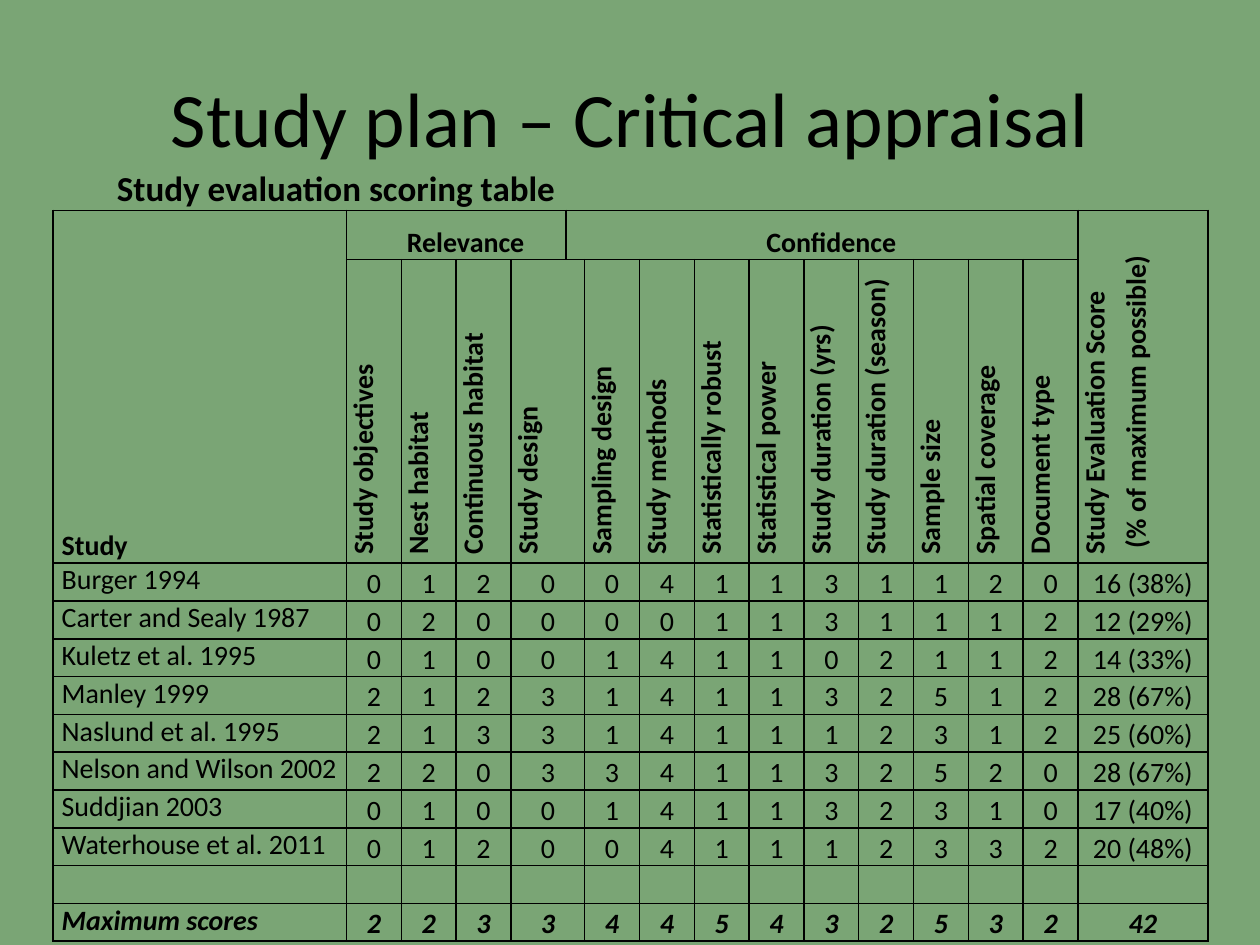
"""Build the critical appraisal slide with its study evaluation scoring table."""
from lxml.etree import SubElement
from pptx import Presentation
from pptx.dml.color import RGBColor
from pptx.enum.text import MSO_ANCHOR as Anchor, PP_ALIGN as Align
from pptx.oxml.ns import qn
from pptx.util import Inches, Pt

BACKGROUND, INK, FONT = "7AA575", "000000", "Calibri"
WIDTH, HEIGHT = 10, 7.5
TABLE_LEFT, TABLE_TOP, TABLE_WIDTH = 0.42, 1.67, 9.17
STUDY_WIDTH, GAP_WIDTH, TOTAL_WIDTH = 2.33, 0.15, 1.03
SCORE_COLUMNS = [1, 2, 3, 4, *range(6, 15)]
TOTAL_COLUMN = 15
SCORE_WIDTH = (TABLE_WIDTH - STUDY_WIDTH - GAP_WIDTH - TOTAL_WIDTH) / len(SCORE_COLUMNS)
COLUMN_WIDTHS = [STUDY_WIDTH] + [SCORE_WIDTH] * 4 + [GAP_WIDTH] + [SCORE_WIDTH] * 9 + [TOTAL_WIDTH]
ROW_HEIGHTS = [0.39, 2.41] + [0.3] * 10

CRITERIA = [
    "Study objectives", "Nest habitat", "Continuous habitat", "Study design",
    "Sampling design", "Study methods", "Statistically robust", "Statistical power",
    "Study duration (yrs)", "Study duration (season)", "Sample size",
    "Spatial coverage", "Document type",
]
STUDIES = [
    ("Burger 1994", "0120041131120", "16 (38%)"),
    ("Carter and Sealy 1987", "0200001131112", "12 (29%)"),
    ("Kuletz et al. 1995", "0100141102112", "14 (33%)"),
    ("Manley 1999", "2123141132512", "28 (67%)"),
    ("Naslund et al. 1995", "2133141112312", "25 (60%)"),
    ("Nelson and Wilson 2002", "2203341132520", "28 (67%)"),
    ("Suddjian 2003", "0100141132310", "17 (40%)"),
    ("Waterhouse et al. 2011", "0120041112332", "20 (48%)"),
    ("", "", ""),
    ("Maximum scores", "2233445432532", "42"),
]


def rgb(value):
    """Return the colour for a hex string."""
    return RGBColor.from_string(value)


def write_text(holder, text, size=16, bold=False, italic=False, align=Align.LEFT,
               anchor=Anchor.TOP, line_spacing=None, spacing=0, indent=0):
    """Write one paragraph per line of text into a text box or table cell."""
    holder.vertical_anchor = anchor
    frame = getattr(holder, "text_frame", holder)
    for index, line in enumerate(text.split("\n")):
        paragraph = frame.add_paragraph() if index else frame.paragraphs[0]
        paragraph.alignment = align
        paragraph.line_spacing = line_spacing
        paragraph.space_before = Pt(spacing if index else 0)
        paragraph.space_after = Pt(spacing)
        if indent:
            paragraph._p.get_or_add_pPr().set("marL", str(Inches(indent)))
        if not line:
            SubElement(paragraph._p, qn("a:endParaRPr"), sz=str(size * 100))
            continue
        run = paragraph.add_run()
        run.text = line
        run.font.name, run.font.size = FONT, Pt(size)
        run.font.bold, run.font.italic = bold, italic
        run.font.color.rgb = rgb(INK)


presentation = Presentation()
presentation.slide_width, presentation.slide_height = Inches(WIDTH), Inches(HEIGHT)
slide = presentation.slides.add_slide(presentation.slide_layouts[6])
slide.background.fill.solid()
slide.background.fill.fore_color.rgb = rgb(BACKGROUND)

headings = [
    ((0.5, 0.3, 9, 1.25), "Study plan – Critical appraisal",
     dict(size=44, align=Align.CENTER, anchor=Anchor.MIDDLE)),
    ((0.83, 1.27, 7.83, 0.44), "Study evaluation scoring table", dict(size=20, bold=True)),
]
for box, text, style in headings:
    shape = slide.shapes.add_textbox(*map(Inches, box))
    shape.text_frame.word_wrap = True
    write_text(shape.text_frame, text, **style)

table = slide.shapes.add_table(
    len(ROW_HEIGHTS), len(COLUMN_WIDTHS), Inches(TABLE_LEFT), Inches(TABLE_TOP),
    Inches(TABLE_WIDTH), Inches(sum(ROW_HEIGHTS))).table
table.first_row = table.horz_banding = False
for column, width in zip(table.columns, COLUMN_WIDTHS):
    column.width = Inches(width)
for row, height in zip(table.rows, ROW_HEIGHTS):
    row.height = Inches(height)

merges = [((0, 0), (1, 0)), ((0, 1), (0, 4)), ((0, 5), (0, 14)), ((0, 15), (1, 15))]
merges += [((row, 4), (row, 5)) for row in range(1, len(ROW_HEIGHTS))]
for first, last in merges:
    table.cell(*first).merge(table.cell(*last))

contents = {(0, 0): ("Study", dict(bold=True, anchor=Anchor.BOTTOM, line_spacing=1.15))}
for column, text in ((1, "Relevance"), (5, "Confidence")):
    contents[0, column] = (text, dict(bold=True, align=Align.CENTER, anchor=Anchor.BOTTOM,
                                      line_spacing=1.15, indent=0.15))
for column, text in zip(SCORE_COLUMNS, CRITERIA):
    anchor = Anchor.TOP if text == "Continuous habitat" else Anchor.MIDDLE
    contents[1, column] = (text, dict(bold=True, anchor=anchor, spacing=2))
contents[0, TOTAL_COLUMN] = ("Study Evaluation Score\n (% of maximum possible)",
                             dict(bold=True, anchor=Anchor.MIDDLE, spacing=2))
for row, (study, scores, total) in enumerate(STUDIES, start=2):
    strong = study == "Maximum scores"
    contents[row, 0] = (study, dict(bold=strong, italic=strong))
    for column, text in zip(SCORE_COLUMNS + [TOTAL_COLUMN], [*scores, total] if scores else []):
        contents[row, column] = (text, dict(bold=strong, italic=strong, align=Align.CENTER,
                                            anchor=Anchor.BOTTOM))

for row in range(len(ROW_HEIGHTS)):
    for column in range(len(COLUMN_WIDTHS)):
        cell = table.cell(row, column)
        cell.margin_left = cell.margin_right = Inches(0.07)
        cell.margin_top = cell.margin_bottom = 0
        text, style = contents.get((row, column), ("", {}))
        write_text(cell, text, **style)
        properties = cell._tc.get_or_add_tcPr()
        if (row == 1 and text) or (row, column) == (0, TOTAL_COLUMN):
            properties.set("vert", "vert270")
        if not cell.is_spanned:
            for side in ("lnL", "lnR", "lnT", "lnB"):
                border = SubElement(properties, qn(f"a:{side}"), w=str(Pt(1)))
                fill = SubElement(border, qn("a:solidFill"))
                SubElement(fill, qn("a:srgbClr"), val=INK)
        cell.fill.background()

presentation.save("out.pptx")
